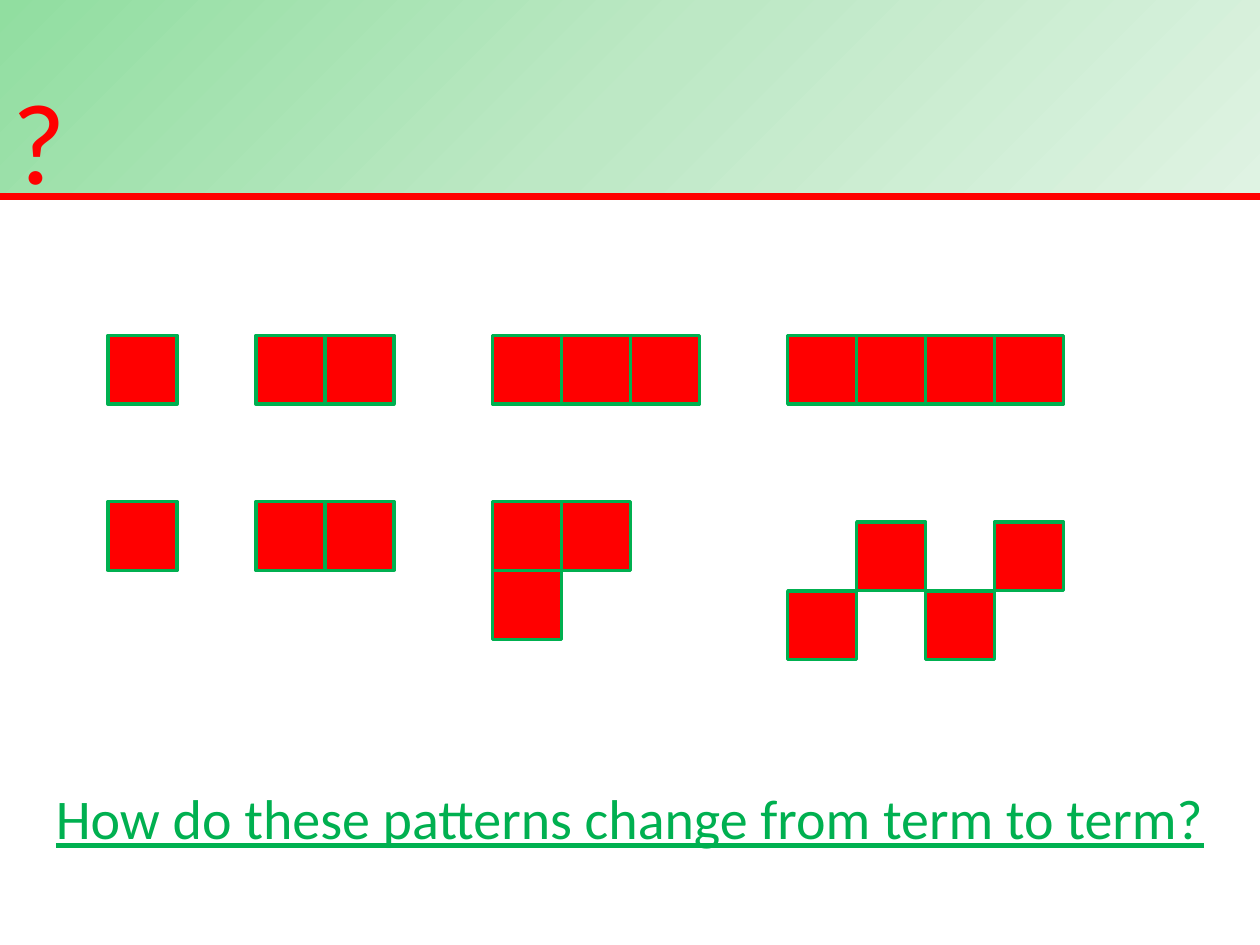
from copy import deepcopy

from pptx import Presentation
from pptx.dml.color import RGBColor as Rgb
from pptx.enum.shapes import MSO_CONNECTOR as Link, MSO_SHAPE as Kind
from pptx.enum.text import MSO_ANCHOR as Anchor, PP_ALIGN as Align
from pptx.oxml.ns import qn
from pptx.oxml.xmlchemy import OxmlElement as Node
from pptx.util import Cm, Pt

COLORS = {
    "red": "FF0000",
    "green": "00B050",
    "dark": "91DEA0",
    "mid": "BDE8C5",
    "light": "DFF3E3",
}
WIDE, HIGH, HEAD = 25.4, 19.05, 3.96
SIDE = 1.39
LEFTS = [2.18, 5.16, 9.93, 15.88]
TERMS = [
    (6.76, [[(col, 0) for col in range(size)] for size in range(1, 5)]),
    (10.11, [[(0, 0)], [(0, 0), (1, 0)], [(0, 0), (1, 0), (0, 1)]]),
    (10.52, [[], [], [], [(0, 1), (1, 0), (2, 1), (3, 0)]]),
]


def tint(name):
    return Rgb.from_string(COLORS[name])


class Board:
    face = "Calibri"
    frame = {
        "word_wrap": True,
        "vertical_anchor": Anchor.TOP,
        "margin_left": Cm(0.25),
        "margin_right": Cm(0.25),
        "margin_top": Cm(0.13),
        "margin_bottom": Cm(0.13),
    }

    def __init__(self, deck):
        self.slide = deck.slides.add_slide(deck.slide_layouts[6])
        self.shapes = self.slide.shapes

    def rect(self, left, top, width, height):
        shape = self.shapes.add_shape(
            Kind.RECTANGLE, Cm(left), Cm(top), Cm(width), Cm(height)
        )
        shape.shadow.inherit = False
        return shape

    def band(self, height, names):
        shape = self.rect(0, 0, WIDE, height)
        shape.line.fill.background()
        fill = shape.fill
        fill.gradient()
        fill.gradient_angle = 315
        stops = shape._element.spPr.find(qn("a:gradFill")).find(qn("a:gsLst"))
        stops.insert(1, deepcopy(stops[0]))
        for spot, (stop, name) in enumerate(zip(fill.gradient_stops, names)):
            stop.position = spot / 2
            stop.color.rgb = tint(name)

    def rule(self, top):
        line = self.shapes.add_connector(
            Link.STRAIGHT, Cm(0), Cm(top), Cm(WIDE), Cm(top)
        )
        line.line.color.rgb = tint("red")
        line.line.width = Pt(4)
        line._element.spPr.append(Node("a:effectLst"))

    def tile(self, left, top):
        shape = self.rect(left, top, SIDE, SIDE)
        shape.fill.solid()
        shape.fill.fore_color.rgb = tint("red")
        shape.line.color.rgb = tint("green")
        shape.line.width = Pt(2)

    def text(self, words, place, color, align, style):
        box = self.shapes.add_textbox(*map(Cm, place)).text_frame
        for key, value in self.frame.items():
            setattr(box, key, value)
        para = box.paragraphs[0]
        para.alignment = align
        run = para.add_run()
        run.text = words
        run.font.color.rgb = tint(color)
        for key, value in {"name": self.face, **style}.items():
            setattr(run.font, key, value)


def main():
    deck = Presentation()
    deck.slide_width, deck.slide_height = Cm(WIDE), Cm(HIGH)
    board = Board(deck)
    board.band(HEAD, ["dark", "mid", "light"])
    board.text("?", (0, 1.27, WIDE, 2.9), "red", Align.LEFT, {"size": Pt(65.7)})
    board.text(
        "How do these patterns change from term to term?",
        (0, 15.67, WIDE, 3.38),
        "green",
        Align.CENTER,
        {"size": Pt(32), "underline": True},
    )
    board.rule(HEAD)
    for top, terms in TERMS:
        for left, cells in zip(LEFTS, terms):
            for col, row in cells:
                board.tile(left + col * SIDE, top + row * SIDE)
    deck.save("out.pptx")


if __name__ == "__main__":
    main()
